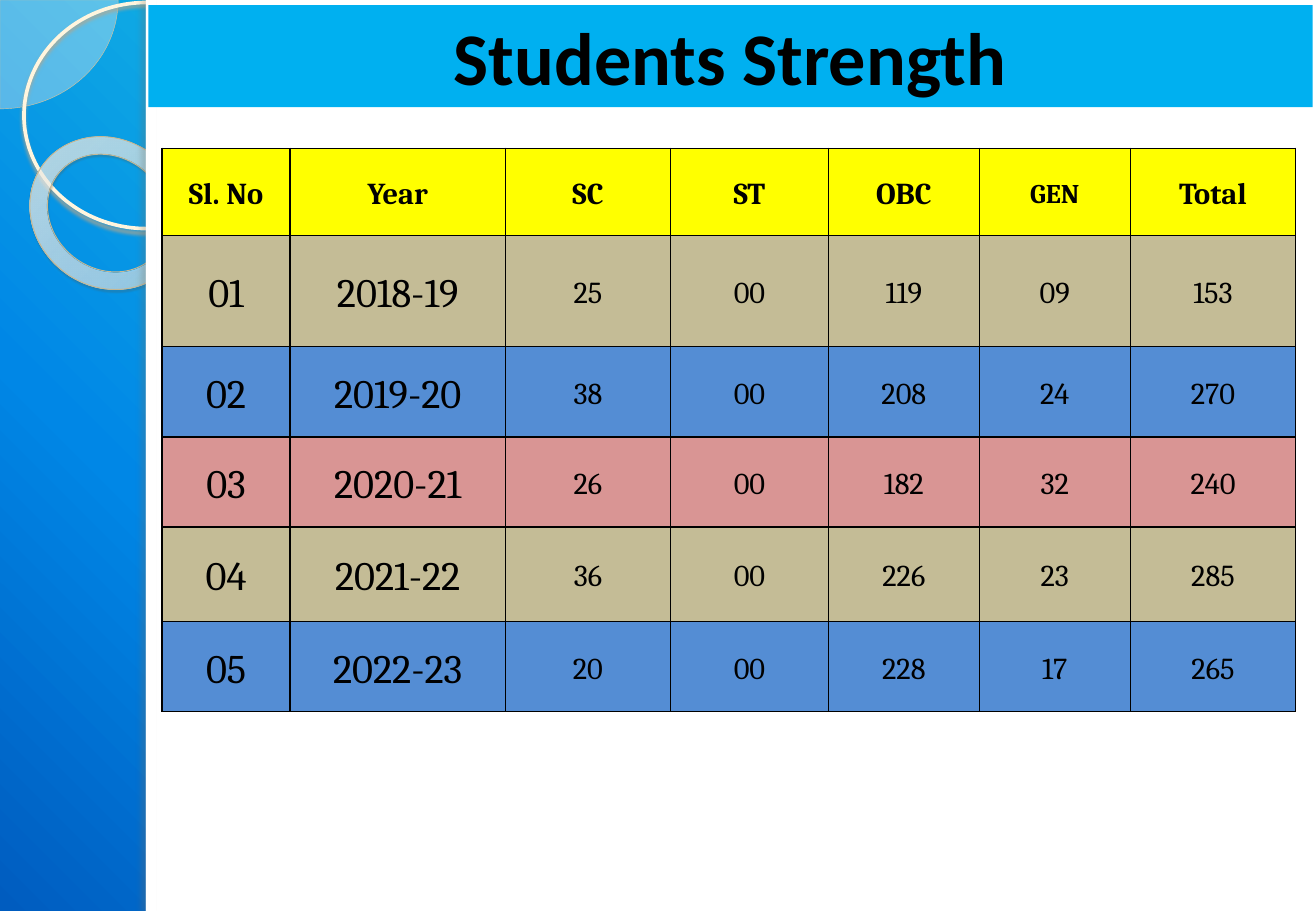
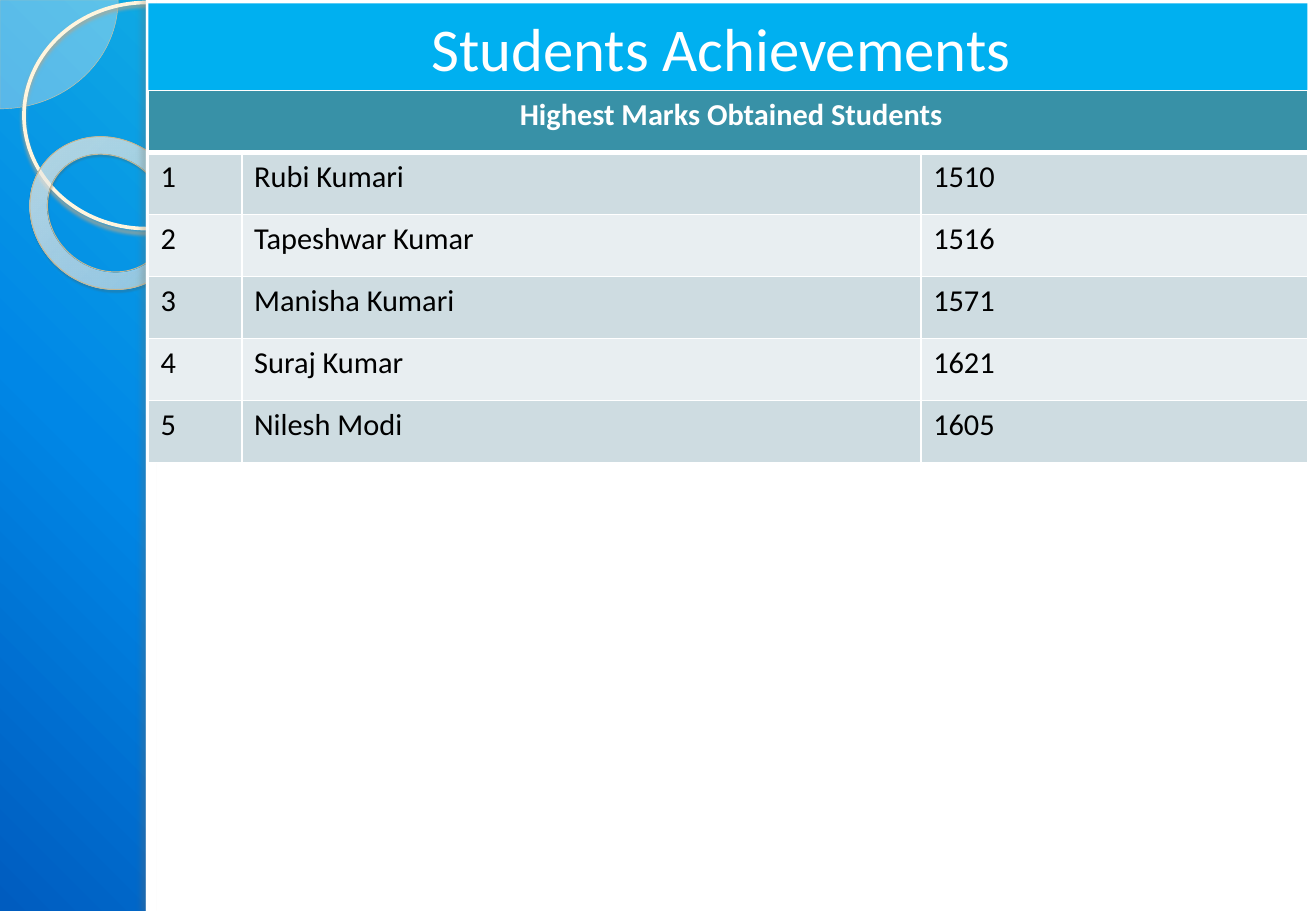
"""Build two slides on student strength and student achievements."""
import pptx
import pptx.dml.color
import pptx.enum.shapes
import pptx.enum.text
import pptx.oxml
import pptx.oxml.ns
import pptx.util

Pt = pptx.util.Pt
RGBColor = pptx.dml.color.RGBColor
SHAPE = pptx.enum.shapes.MSO_SHAPE
ALIGN = pptx.enum.text.PP_ALIGN
ANCHOR = pptx.enum.text.MSO_ANCHOR
NS = pptx.oxml.ns.nsdecls("a")
qn = pptx.oxml.ns.qn

BLACK = RGBColor(0x00, 0x00, 0x00)
WHITE = RGBColor(0xFF, 0xFF, 0xFF)
SKY = RGBColor(0x00, 0xB0, 0xF0)
YELLOW = RGBColor(0xFF, 0xFF, 0x00)
KHAKI = RGBColor(0xC4, 0xBC, 0x96)
BLUE = RGBColor(0x54, 0x8D, 0xD4)
ROSE = RGBColor(0xD9, 0x95, 0x94)
TEAL = RGBColor(0x38, 0x91, 0xA7)
MIST = RGBColor(0xCE, 0xDC, 0xE1)
PALE = RGBColor(0xE8, 0xEE, 0xF1)
CREAM = RGBColor(0xFE, 0xFA, 0xF4)
PIE_LINE = RGBColor(0xD3, 0xC3, 0x9F)
RING_LINE = RGBColor(0xFF, 0xF5, 0xDE)
RING_SHADOW = RGBColor(0xB0, 0xA6, 0x8F)
DONUT_LINE = RGBColor(0xC7, 0xB8, 0x93)
DONUT_SHADOW = RGBColor(0x5A, 0x54, 0x44)
EDGE_SHADOW = RGBColor(0x73, 0x6F, 0x63)

BACKGROUND_STOPS = [
    (0, RGBColor(0x03, 0xD4, 0xA8), 100), (25, RGBColor(0x21, 0xD6, 0xE0), 100),
    (75, RGBColor(0x00, 0x87, 0xE6), 100), (100, RGBColor(0x00, 0x5C, 0xBF), 100)]
DONUT_STOPS = [
    (0, RGBColor(0xFF, 0xFC, 0xF6), 70), (70, RGBColor(0xFF, 0xFE, 0xFB), 55),
    (100, RGBColor(0xF0, 0xD2, 0x8E), 60)]
DIAGONAL = f'<a:lin {NS} ang="8100000" scaled="0"/>'
RADIAL = (f'<a:path {NS} path="circle"><a:fillToRect l="-408000" t="-50000" '
          'r="508000" b="150000"/></a:path>')

STRENGTH = [
    ("Sl. No", "Year", "SC", "ST", "OBC", "GEN", "Total"),
    ("01", "2018-19", "25", "00", "119", "09", "153"),
    ("02", "2019-20", "38", "00", "208", "24", "270"),
    ("03", "2020-21", "26", "00", "182", "32", "240"),
    ("04", "2021-22", "36", "00", "226", "23", "285"),
    ("05", "2022-23", "20", "00", "228", "17", "265")]
STRENGTH_FILLS = [YELLOW, KHAKI, BLUE, ROSE, KHAKI, BLUE]
STRENGTH_COLS = [76, 127.5, 98, 93.5, 89.5, 89.5, 98]
STRENGTH_ROWS = [51.5, 66, 53.5, 53.5, 56, 53.5]

MARKS = [
    (" Highest Marks Obtained Students", "", ""),
    ("1", "Rubi Kumari", "1510"),
    ("2", "Tapeshwar Kumar", "1516"),
    ("3", "Manisha Kumari", "1571"),
    ("4", "Suraj Kumar", "1621"),
    ("5", "Nilesh Modi", "1605")]
MARKS_COLS = [55.5, 402.5, 229]
MARKS_ROW = 36.8


def set_all(target, **values):
    for name, value in values.items():
        setattr(target, name, value)


def color_xml(color, alpha):
    return f'<a:srgbClr val="{color}"><a:alpha val="{alpha * 1000}"/></a:srgbClr>'


def set_gradient(fill, owner, stops, direction):
    fill.gradient()
    grad = owner.find(".//" + qn("a:gradFill"))
    for child in list(grad):
        grad.remove(child)
    gs = "".join(f'<a:gs pos="{pos * 1000}">{color_xml(color, alpha)}</a:gs>'
                 for pos, color, alpha in stops)
    for xml in (f"<a:gsLst {NS}>{gs}</a:gsLst>", direction):
        grad.append(pptx.oxml.parse_xml(xml))


def add_shape(slide, kind, box, fill=None, line=None, width=0, shadow=None):
    s = slide.shapes.add_shape(kind, *map(Pt, box))
    s.shadow.inherit = False
    if fill is None:
        s.fill.background()
    else:
        s.fill.solid()
        s.fill.fore_color.rgb = fill
    if line is None:
        s.line.fill.background()
    else:
        s.line.color.rgb = line
        s.line.width = Pt(width)
    if shadow:
        color, alpha, blur, dist, angle = shadow
        s.element.find(".//" + qn("a:effectLst")).append(pptx.oxml.parse_xml(
            f'<a:outerShdw {NS} blurRad="{Pt(blur)}" dist="{Pt(dist)}" '
            f'dir="{angle * 60000}" algn="tl" rotWithShape="0">'
            f"{color_xml(color, alpha)}</a:outerShdw>"))
    return s


def decorate_layout(layout, slide):
    set_gradient(layout.background.fill, layout.element, BACKGROUND_STOPS, DIAGONAL)
    for ph in list(layout.placeholders):
        ph.element.getparent().remove(ph.element)

    pie = add_shape(slide, SHAPE.PIE, (-70, -64.5, 140, 129), CREAM, PIE_LINE, 0.25)
    pie.adjustments[0], pie.adjustments[1] = 0, 54.02
    pie.element.find(".//" + qn("a:solidFill"))[0].append(
        pptx.oxml.parse_xml(f'<a:alpha {NS} val="33000"/>'))
    add_shape(slide, SHAPE.OVAL, (14.2, 1.5, 145.5, 134), None, RING_LINE, 2.15,
              (RING_SHADOW, 85, 2, 2, 90))
    donut = add_shape(slide, SHAPE.DONUT, (16, 82.8, 96, 87), CREAM, DONUT_LINE, 0.58,
                      (DONUT_SHADOW, 35, 1, 1.2, 75))
    donut.adjustments[0] = 0.12
    donut.rotation = 38.6
    set_gradient(donut.fill, donut.element, DONUT_STOPS, RADIAL)
    add_shape(slide, SHAPE.RECTANGLE, (86.4, 0, 693.6, 540), WHITE)
    add_shape(slide, SHAPE.RECTANGLE, (86.4, 0, 6.5, 540), WHITE,
              shadow=(EDGE_SHADOW, 25, 3, 3, 180))
    for s in list(slide.shapes):
        layout.shapes.element.append(s.element)


def write(tf, text, align, **font):
    p = tf.paragraphs[0]
    p.alignment = align
    r = p.add_run()
    r.text = text
    r.font.color.rgb = font.pop("color")
    set_all(r.font, **font)
    return p


def add_title(slide, text, box, **font):
    tf = add_shape(slide, SHAPE.RECTANGLE, box, SKY).text_frame
    set_all(tf, word_wrap=True, vertical_anchor=ANCHOR.MIDDLE)
    write(tf, text, ALIGN.CENTER, name="Calibri", **font)


def add_grid(slide, left, top, cols, rows):
    box = map(Pt, (left, top, sum(cols), sum(rows)))
    table = slide.shapes.add_table(len(rows), len(cols), *box).table
    set_all(table, first_row=False, horz_banding=False)
    for col, width in zip(table.columns, cols):
        col.width = Pt(width)
    for row, height in zip(table.rows, rows):
        row.height = Pt(height)
    return table


def paint_cell(cell, fill, border, top=1, bottom=1):
    cell.fill.solid()
    cell.fill.fore_color.rgb = fill
    sides = {"lnL": 1, "lnR": 1, "lnT": top, "lnB": bottom}
    for i, (side, width) in enumerate(sides.items()):
        cell._tc.get_or_add_tcPr().insert(i, pptx.oxml.parse_xml(
            f'<a:{side} {NS} w="{Pt(width)}"><a:solidFill>'
            f'<a:srgbClr val="{border}"/></a:solidFill></a:{side}>'))


def add_strength(slide):
    add_title(slide, "Students Strength", (88, 3, 690, 60.5),
              size=Pt(44), bold=True, color=BLACK)
    table = add_grid(slide, 96, 88, STRENGTH_COLS, STRENGTH_ROWS)
    for i, (values, fill) in enumerate(zip(STRENGTH, STRENGTH_FILLS)):
        for j, text in enumerate(values):
            cell = table.cell(i, j)
            paint_cell(cell, fill, BLACK)
            set_all(cell, vertical_anchor=ANCHOR.MIDDLE, margin_left=Pt(4.5),
                    margin_right=Pt(4.5), margin_top=0, margin_bottom=0)
            size = 16 if text == "GEN" else 24 if i and j < 2 else 18
            p = write(cell.text_frame, text, ALIGN.CENTER, name="Cambria",
                      size=Pt(size), bold=i == 0, color=BLACK)
            p.line_spacing = 1.15


def add_achievements(slide):
    add_title(slide, "Students Achievements ", (88, 2, 687, 51.5),
              size=Pt(36), color=WHITE)
    table = add_grid(slide, 88, 53.5, MARKS_COLS, [MARKS_ROW] * len(MARKS))
    table.cell(0, 0).merge(table.cell(0, 2))
    for i, values in enumerate(MARKS):
        head = i == 0
        for j, text in enumerate(values):
            cell = table.cell(i, j)
            paint_cell(cell, TEAL if head else MIST if i % 2 else PALE, WHITE,
                       top=3 if i == 1 else 1, bottom=3 if head else 1)
            if text:
                write(cell.text_frame, text, ALIGN.CENTER if head else ALIGN.LEFT,
                      name="Calibri", size=Pt(18), bold=head,
                      color=WHITE if head else BLACK)


def main():
    prs = pptx.Presentation()
    set_all(prs, slide_width=Pt(780), slide_height=Pt(540))
    layout = prs.slide_layouts[6]
    strength, achievements = (prs.slides.add_slide(layout) for _ in range(2))
    decorate_layout(layout, strength)
    add_strength(strength)
    add_achievements(achievements)
    prs.save("out.pptx")


if __name__ == "__main__":
    main()
